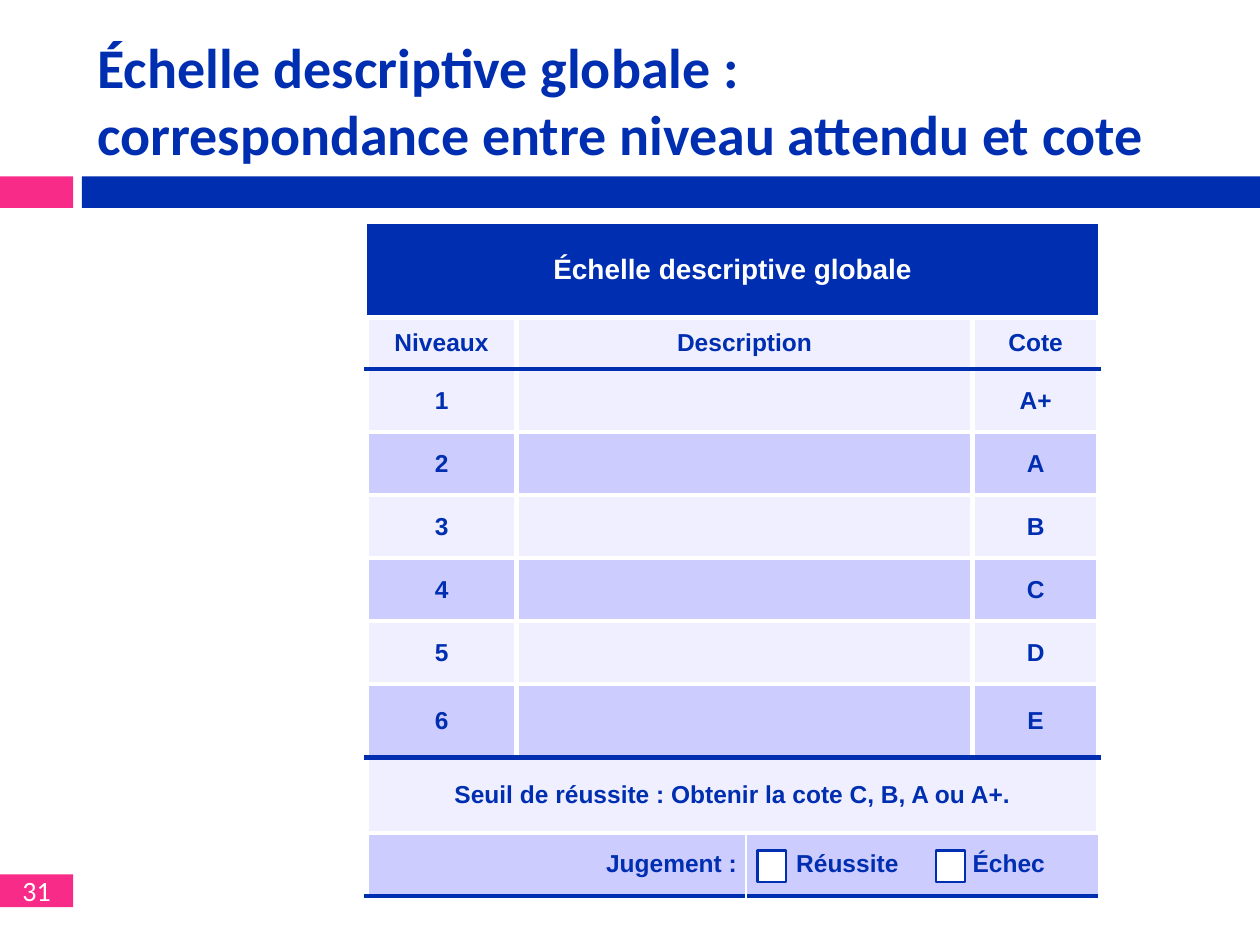
from collections import namedtuple
from dataclasses import dataclass

from lxml import etree
from pptx import Presentation
from pptx.dml.color import RGBColor
from pptx.enum.shapes import MSO_SHAPE
from pptx.enum.text import MSO_ANCHOR, MSO_AUTO_SIZE, PP_ALIGN
from pptx.oxml.ns import qn
from pptx.util import Inches, Pt

RECT = MSO_SHAPE.RECTANGLE
MIDDLE = MSO_ANCHOR.MIDDLE
NO_FIT = MSO_AUTO_SIZE.NONE
LEFT, CENTER, RIGHT = PP_ALIGN.LEFT, PP_ALIGN.CENTER, PP_ALIGN.RIGHT

Box = namedtuple("Box", "x y w h")


@dataclass(frozen=True)
class Theme:
    navy: str = "002EB0"
    pink: str = "F82C88"
    pale: str = "EFEFFF"
    lilac: str = "CCCCFF"
    white: str = "FFFFFF"
    head: str = "Calibri"
    body: str = "Arial"
    title: int = 32
    large: int = 16
    text: int = 14
    rule: int = 3


THEME = Theme()

COLS = [1.19, 1.82, 1.8, 1]
ROWS = [0.75, 0.41] + [0.5] * 5 + [0.58, 0.6, 0.5]
GRADES = ["A+", "A", "B", "C", "D", "E"]
RULES = {2, 8, 10}
LAST = len(ROWS) - 1
TABS = [0.33, 1.73]


def apply(item, values):
    for name, value in values.items():
        setattr(item, name, value)


def style(run, face, size, color, bold=True):
    apply(run.font, {"name": face, "size": Pt(size), "bold": bold})
    run.font.color.rgb = RGBColor.from_string(color)


def block(slide, box, fill, line=None):
    shape = slide.shapes.add_shape(RECT, *map(Inches, box))
    shape.shadow.inherit = False
    shape.fill.solid()
    shape.fill.fore_color.rgb = RGBColor.from_string(fill)
    if line:
        shape.line.color.rgb = RGBColor.from_string(line)
        shape.line.width = Pt(1.5)
    else:
        shape.line.fill.background()
    return shape


def add_title(slide, box, lines):
    title = slide.shapes.title
    apply(title, dict(zip(("left", "top", "width", "height"), map(Inches, box))))
    frame = title.text_frame
    apply(frame, {"vertical_anchor": MIDDLE, "auto_size": NO_FIT, "word_wrap": True})
    para = frame.paragraphs[0]
    para.alignment = LEFT
    for i, line in enumerate(lines):
        if i:
            para.add_line_break()
        run = para.add_run()
        run.text = line
        style(run, THEME.head, THEME.title, THEME.navy)


def add_band(slide, box, tab, gap):
    block(slide, (box.x, box.y, tab, box.h), THEME.pink)
    start = tab + gap
    block(slide, (box.x + start, box.y, box.w - start, box.h), THEME.navy)


def add_page(slide, box, number):
    shape = block(slide, box, THEME.pink)
    frame = shape.text_frame
    apply(frame, {"margin_top": 0, "margin_bottom": 0, "vertical_anchor": MIDDLE})
    para = frame.paragraphs[0]
    para.alignment = CENTER
    run = para.add_run()
    run.text = number
    style(run, THEME.head, THEME.large, THEME.white, False)


def set_edges(cell, edges):
    props = cell._tc.get_or_add_tcPr()
    for side, color in edges.items():
        line = etree.SubElement(props, qn("a:ln" + side), w=str(Pt(THEME.rule)))
        fill = etree.SubElement(line, qn("a:solidFill"))
        etree.SubElement(fill, qn("a:srgbClr"), val=color)


def row_fill(row):
    if row == 0:
        return THEME.navy
    return THEME.lilac if row > 1 and row % 2 else THEME.pale


def paint_cell(cell, row, col):
    tone = [THEME.navy if r in RULES else THEME.white for r in (row, row + 1)]
    edges = {"L": THEME.white, "R": THEME.white, "T": tone[0], "B": tone[1]}
    if row == 0:
        edges = {"B": tone[1]}
    elif row == LAST:
        if col > 0:
            del edges["L"]
        if col < len(COLS) - 1:
            del edges["R"]
    set_edges(cell, edges)
    cell.fill.solid()
    cell.fill.fore_color.rgb = RGBColor.from_string(row_fill(row))


def write_cell(cell, text, size, color, align=CENTER, before=3, after=3, tabs=()):
    apply(cell, {"margin_left": Inches(0.07), "margin_right": Inches(0.07),
                 "margin_top": 0, "margin_bottom": 0, "vertical_anchor": MIDDLE})
    para = cell.text_frame.paragraphs[0]
    apply(para, {"alignment": align, "space_before": Pt(before),
                 "space_after": Pt(after)})
    if tabs:
        stops = etree.SubElement(para._p.get_or_add_pPr(), qn("a:tabLst"))
        for stop in tabs:
            etree.SubElement(stops, qn("a:tab"), pos=str(Inches(stop)), algn="l")
    run = para.add_run()
    run.text = text
    style(run, THEME.body, size, color)


def add_scale(slide, box):
    frame = slide.shapes.add_table(len(ROWS), len(COLS), *map(Inches, box))
    table = frame.table
    apply(table, {"first_row": False, "horz_banding": False})
    for col, width in zip(table.columns, COLS):
        col.width = Inches(width)
    for row, height in zip(table.rows, ROWS):
        row.height = Inches(height)
    for r in range(len(ROWS)):
        for c in range(len(COLS)):
            paint_cell(table.cell(r, c), r, c)

    spans = [(0, 0, 3), (8, 0, 3), (9, 0, 1), (9, 2, 3)]
    spans += [(r, 1, 2) for r in range(1, 8)]
    for row, first, last in spans:
        table.cell(row, first).merge(table.cell(row, last))

    def put(row, col, text, **form):
        write_cell(table.cell(row, col), text, THEME.text, THEME.navy, **form)

    write_cell(table.cell(0, 0), "Échelle descriptive globale", THEME.large, THEME.white)
    for col, text in [(0, "Niveaux"), (1, "Description"), (3, "Cote")]:
        put(1, col, text)
    for level, grade in enumerate(GRADES, 1):
        put(level + 1, 0, str(level), before=6, after=6)
        put(level + 1, 3, grade)
    put(8, 0, "Seuil de réussite : Obtenir la cote C, B, A ou A+.")
    put(9, 0, "Jugement :", align=RIGHT)
    put(9, 2, "\tRéussite\tÉchec", align=LEFT, tabs=TABS)

    for left in (3.1, 4.52):
        block(slide, (box.x + left, box.y + 4.98, 0.23, 0.25), THEME.white, THEME.navy)


def main():
    deck = Presentation()
    apply(deck, {"slide_width": Inches(10), "slide_height": Inches(7.5)})
    slide = deck.slides.add_slide(deck.slide_layouts[5])
    add_band(slide, Box(0, 1.4, 10, 0.25), 0.58, 0.07)
    add_page(slide, Box(0, 6.94, 0.58, 0.26), "31")
    add_title(slide, Box(0.67, 0.25, 9.16, 1.08),
              ["Échelle descriptive globale :",
               "correspondance entre niveau attendu et cote"])
    add_scale(slide, Box(2.91, 1.77, sum(COLS), sum(ROWS)))
    deck.save("out.pptx")


if __name__ == "__main__":
    main()
